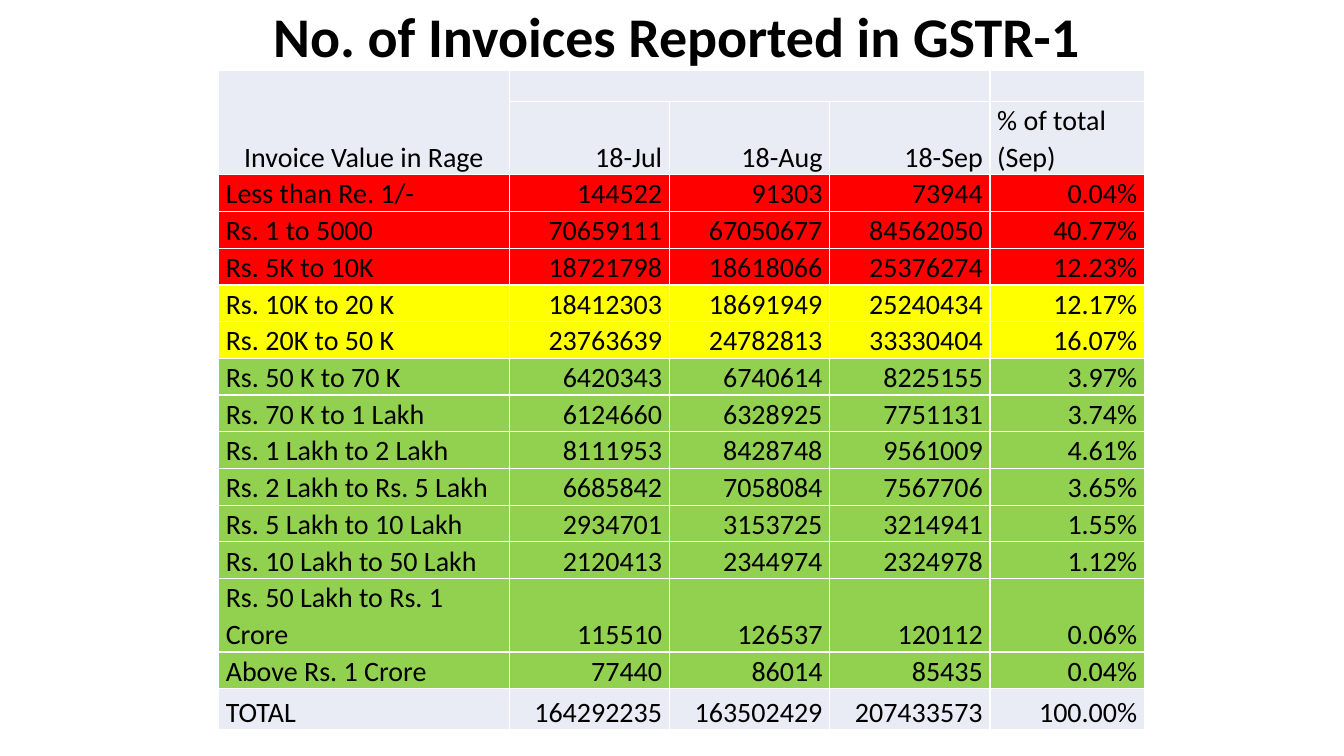
from lxml import etree
from pptx import Presentation
from pptx.dml.color import RGBColor
from pptx.enum.text import MSO_ANCHOR, MSO_AUTO_SIZE, PP_ALIGN
from pptx.oxml.ns import qn
from pptx.util import Cm, Pt

LEFT, CENTER, RIGHT = PP_ALIGN.LEFT, PP_ALIGN.CENTER, PP_ALIGN.RIGHT
TOP, BOTTOM = MSO_ANCHOR.TOP, MSO_ANCHOR.BOTTOM
NO_AUTOFIT = MSO_AUTO_SIZE.NONE

BLACK = RGBColor(0x00, 0x00, 0x00)
WHITE = RGBColor(0xFF, 0xFF, 0xFF)
PALE = RGBColor(0xE9, 0xEB, 0xF5)
RED = RGBColor(0xFF, 0x00, 0x00)
YELLOW = RGBColor(0xFF, 0xFF, 0x00)
GREEN = RGBColor(0x92, 0xD0, 0x50)

COLUMN_WIDTHS = [7.32, 4.04, 4.04, 4.04, 3.89]
HEADER_HEIGHTS = [0.74, 1.78]
ROW_HEIGHT = 0.89
HEADINGS = ["Invoice Value in Rage", "18-Jul", "18-Aug", "18-Sep", "% of total (Sep)"]
INVOICE_ROWS = [
    (RED, "Less than Re. 1/-", "144522", "91303", "73944", "0.04%"),
    (RED, "Rs. 1 to 5000", "70659111", "67050677", "84562050", "40.77%"),
    (RED, "Rs. 5K to 10K", "18721798", "18618066", "25376274", "12.23%"),
    (YELLOW, "Rs. 10K to 20 K", "18412303", "18691949", "25240434", "12.17%"),
    (YELLOW, "Rs. 20K to 50 K", "23763639", "24782813", "33330404", "16.07%"),
    (GREEN, "Rs. 50 K to 70 K", "6420343", "6740614", "8225155", "3.97%"),
    (GREEN, "Rs. 70 K to 1 Lakh", "6124660", "6328925", "7751131", "3.74%"),
    (GREEN, "Rs. 1 Lakh to 2 Lakh", "8111953", "8428748", "9561009", "4.61%"),
    (GREEN, "Rs. 2 Lakh to Rs. 5 Lakh", "6685842", "7058084", "7567706", "3.65%"),
    (GREEN, "Rs. 5 Lakh to 10 Lakh", "2934701", "3153725", "3214941", "1.55%"),
    (GREEN, "Rs. 10 Lakh to 50 Lakh", "2120413", "2344974", "2324978", "1.12%"),
    (GREEN, "Rs. 50 Lakh to Rs. 1 Crore", "115510", "126537", "120112", "0.06%"),
    (GREEN, "Above Rs. 1 Crore", "77440", "86014", "85435", "0.04%"),
    (PALE, "TOTAL", "164292235", "163502429", "207433573", "100.00%"),
]
SPECIAL_HEIGHTS = {"Rs. 50 Lakh to Rs. 1 Crore": 1.78, "TOTAL": 1.04}


def write_text(text_frame, text, font="Calibri", size=20, bold=False,
               color=BLACK, align=LEFT):
    paragraph = text_frame.paragraphs[0]
    paragraph.alignment = align
    paragraph.line_spacing = 1.07
    paragraph.space_after = Pt(8)
    run = paragraph.add_run()
    run.text = text
    run.font.name = font
    run.font.size = Pt(size)
    run.font.bold = bold
    run.font.color.rgb = color


class SlideBuilder:
    def __init__(self, presentation, font="Calibri"):
        self.font = font
        self.slide = presentation.slides.add_slide(presentation.slide_layouts[5])

    def title(self, text, left, top, width, height):
        shape = self.slide.shapes.title
        shape.left, shape.top = Cm(left), Cm(top)
        shape.width, shape.height = Cm(width), Cm(height)
        text_frame = shape.text_frame
        text_frame.word_wrap = True
        text_frame.auto_size = NO_AUTOFIT
        text_frame.vertical_anchor = TOP
        write_text(text_frame, text, font=self.font, size=40, bold=True, align=CENTER)

    def table(self, left, top, widths, heights):
        frame = self.slide.shapes.add_table(
            len(heights), len(widths), Cm(left), Cm(top),
            Cm(sum(widths)), Cm(sum(heights)))
        table = frame.table
        table.first_row = False
        table.horz_banding = False
        for column, width in zip(table.columns, widths):
            column.width = Cm(width)
        for row, height in zip(table.rows, heights):
            row.height = Cm(height)
        for cell in table.iter_cells():
            self.style_cell(cell, PALE)
        return table

    def style_cell(self, cell, fill):
        cell.margin_left = cell.margin_right = Cm(0.18)
        cell.margin_top = cell.margin_bottom = 0
        cell.vertical_anchor = BOTTOM
        cell.fill.solid()
        cell.fill.fore_color.rgb = fill
        properties = cell._tc.get_or_add_tcPr()
        for index, side in enumerate(("lnL", "lnR", "lnT", "lnB")):
            line = etree.Element(qn(f"a:{side}"), w=str(Pt(1)))
            line_fill = etree.SubElement(line, qn("a:solidFill"))
            etree.SubElement(line_fill, qn("a:srgbClr"), val=str(WHITE))
            properties.insert(index, line)

    def cell_text(self, cell, text, align):
        write_text(cell.text_frame, text, font=self.font, align=align)


def main():
    presentation = Presentation()
    presentation.slide_width = Cm(33.87)
    presentation.slide_height = Cm(19.05)
    builder = SlideBuilder(presentation)
    builder.title("No. of Invoices Reported in GSTR-1", 5.08, -0.2, 23.93, 2.08)

    heights = HEADER_HEIGHTS + [
        SPECIAL_HEIGHTS.get(row[1], ROW_HEIGHT) for row in INVOICE_ROWS]
    table = builder.table(5.51, 1.78, COLUMN_WIDTHS, heights)
    table.cell(0, 0).merge(table.cell(1, 0))
    table.cell(0, 1).merge(table.cell(0, 3))

    heading_aligns = [CENTER, RIGHT, RIGHT, RIGHT, LEFT]
    for column, (heading, align) in enumerate(zip(HEADINGS, heading_aligns)):
        builder.cell_text(table.cell(min(column, 1), column), heading, align)

    for row, (fill, *values) in enumerate(INVOICE_ROWS, start=len(HEADER_HEIGHTS)):
        for column, value in enumerate(values):
            cell = table.cell(row, column)
            cell.fill.fore_color.rgb = fill
            builder.cell_text(cell, value, RIGHT if column else LEFT)

    presentation.save("out.pptx")


if __name__ == "__main__":
    main()
